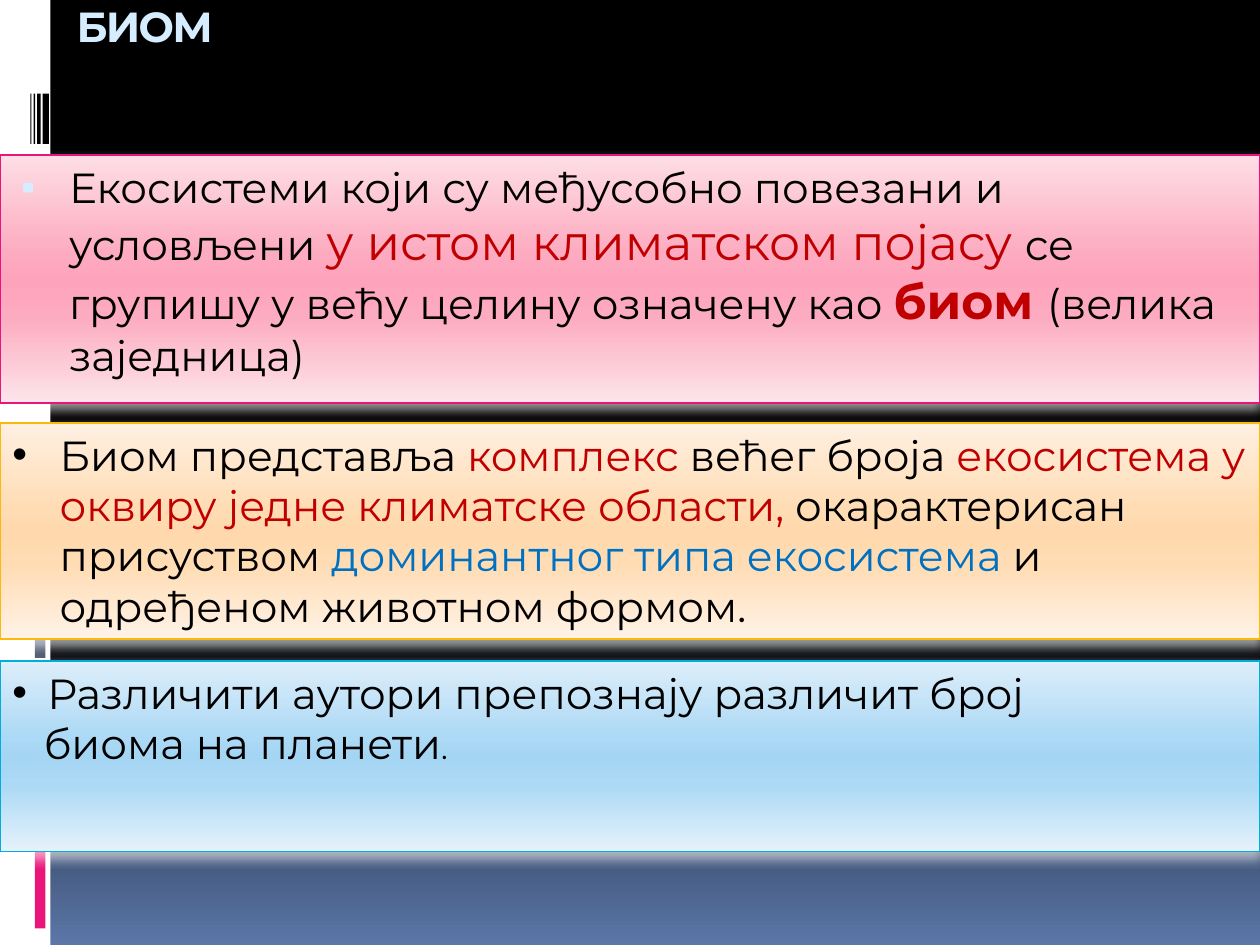
from lxml.etree import SubElement
from pptx import Presentation
from pptx.dml.color import RGBColor
from pptx.enum.shapes import MSO_SHAPE as Shape
from pptx.enum.text import MSO_ANCHOR as Anchor, PP_ALIGN as Align
from pptx.oxml.ns import qn
from pptx.util import Pt

FONT = "Montserrat"
BLACK = RGBColor(0x00, 0x00, 0x00)
WHITE = RGBColor(0xFF, 0xFF, 0xFF)
NAVY = RGBColor(0x5B, 0x77, 0xA8)
SLATE = RGBColor(0x4E, 0x5B, 0x6F)
ICE = RGBColor(0xD6, 0xEC, 0xFF)
RED = RGBColor(0xC0, 0x00, 0x00)
BLUE = RGBColor(0x00, 0x70, 0xC0)
PINK = RGBColor(0xEA, 0x15, 0x7A)
AMBER = RGBColor(0xFE, 0xB8, 0x0A)
CYAN = RGBColor(0x00, 0xAD, 0xDC)

PANEL_STOPS = (0, 40, 50, 65, 100)
PINK_SHADES = [RGBColor.from_string(c) for c in ("FDDEE5", "FDABC0", "FDA3BB", "FDABC0", "FDE5EB")]
AMBER_SHADES = [RGBColor.from_string(c) for c in ("FFF0E1", "FFDCB4", "FFD9AD", "FFDCB4", "FFF3E7")]
CYAN_SHADES = [RGBColor.from_string(c) for c in ("DEEEFA", "ACD9F5", "A4D6F4", "ACD9F5", "E5F2FB")]


def add_color(parent, color):
    return SubElement(parent, qn("a:srgbClr"), val=str(color))


def fill_downward(fill, owner, positions, colors):
    """Fill with a top-to-bottom gradient; owner is the XML element holding the fill."""
    fill.gradient()
    fill.gradient_angle = 270
    stops = next(owner.iter(qn("a:gsLst")))
    for stop in list(stops):
        stops.remove(stop)
    for position, color in zip(positions, colors):
        add_color(SubElement(stops, qn("a:gs"), pos=str(position * 1000)), color)


def add_bar(slide, left, top, width, height, color):
    bar = slide.shapes.add_shape(Shape.RECTANGLE, Pt(left), Pt(top), Pt(width), Pt(height))
    bar.shadow.inherit = False
    bar.fill.solid()
    bar.fill.fore_color.rgb = color
    bar.line.fill.background()


def add_glow(panel):
    """Give the panel a soft white shadow just below it."""
    panel.shadow.inherit = False
    effects = panel._element.spPr.find(qn("a:effectLst"))
    shadow = SubElement(effects, qn("a:outerShdw"), blurRad=str(Pt(6)), dist=str(Pt(3)),
                        dir="5400000", algn="ctr", rotWithShape="0")
    SubElement(add_color(shadow, WHITE), qn("a:alpha"), val="60000")


def add_panel(slide, top, height, shades, edge):
    panel = slide.shapes.add_shape(Shape.RECTANGLE, 0, Pt(top), Pt(720), Pt(height))
    fill_downward(panel.fill, panel._element.spPr, PANEL_STOPS, shades)
    panel.line.color.rgb = edge
    panel.line.width = Pt(0.94)
    add_glow(panel)
    panel.text_frame.word_wrap = True
    panel.text_frame.vertical_anchor = Anchor.TOP
    return panel.text_frame


def set_indent(paragraph, margin, hanging=0):
    properties = paragraph._p.get_or_add_pPr()
    properties.set("marL", str(Pt(margin)))
    properties.set("indent", str(-Pt(hanging)))


def set_bullet(paragraph, char, color=BLACK, percent=100):
    properties = paragraph._p.get_or_add_pPr()
    add_color(SubElement(properties, qn("a:buClr")), color)
    SubElement(properties, qn("a:buSzPct"), val=str(percent * 1000))
    SubElement(properties, qn("a:buFont"), typeface="Arial")
    SubElement(properties, qn("a:buChar"), char=char)


def write(paragraph, *pieces):
    """Write (text, color, size, bold) pieces; size and bold may be left out."""
    paragraph.alignment = Align.LEFT
    paragraph.font.name = FONT
    for text, color, *style in pieces:
        size, bold = (style + [24, False][len(style):])
        run = paragraph.add_run()
        run.text = text
        run.font.color.rgb = color
        run.font.size = Pt(size)
        run.font.bold = bold


def add_side_strip(slide):
    add_bar(slide, 0, 0, 28.8, 540, WHITE)
    for top, height, color in ((397.5, 133, PINK), (378, 18, AMBER),
                               (365, 11, SLATE), (358, 6, PINK)):
        add_bar(slide, 20, top, 6, height, color)
    for left, width in ((24.3, 3.6), (21.2, 2), (19.3, 0.8), (17.4, 0.6)):
        add_bar(slide, left, 53.5, width, 28.8, BLACK)


def add_title(slide):
    frame = slide.shapes.add_textbox(Pt(36.7), 0, Pt(648), Pt(90)).text_frame
    frame.word_wrap = True
    frame.margin_top = 0
    title = frame.paragraphs[0]
    write(title, ("БИОМ", ICE, 24, True))
    title.runs[0].font._element.set("spc", "-100")


def add_definition(slide):
    definition = add_panel(slide, 88.5, 142, PINK_SHADES, PINK).paragraphs[0]
    set_indent(definition, 32.4, 27.4)
    set_bullet(definition, "▪", ICE, 95)
    write(definition,
          ("Екосистеми који су међусобно повезани и условљени ", BLACK),
          ("у истом климатском појасу ", RED, 28),
          ("се групишу у већу целину означену као ", BLACK),
          ("биом ", RED, 28, True),
          ("(велика заједница)", BLACK))


def add_composition(slide):
    composition = add_panel(slide, 241.7, 123.6, AMBER_SHADES, AMBER).paragraphs[0]
    set_indent(composition, 27, 27)
    set_bullet(composition, "•")
    write(composition,
          ("Биом представља ", BLACK),
          ("комплекс ", RED),
          ("већег броја ", BLACK),
          ("екосистема у оквиру једне климатске области, ", RED),
          ("окарактерисан присуством ", BLACK),
          ("доминантног типа екосистема ", BLUE),
          ("и одређеном животном формом.", BLACK))


def add_count_note(slide):
    frame = add_panel(slide, 377.7, 109, CYAN_SHADES, CYAN)
    first_line = frame.paragraphs[0]
    set_indent(first_line, 20, 20)
    set_bullet(first_line, "•")
    write(first_line, ("Различити аутори препознају различит број", BLACK))
    second_line = frame.add_paragraph()
    set_indent(second_line, 18)
    write(second_line, ("биома на планети", BLACK), (".", BLACK, 18))


def main():
    deck = Presentation()
    deck.slide_width, deck.slide_height = Pt(720), Pt(540)
    slide = deck.slides.add_slide(deck.slide_layouts[6])
    fill_downward(slide.background.fill, slide._element, (0, 65, 100), (BLACK, BLACK, NAVY))
    add_side_strip(slide)
    add_title(slide)
    add_definition(slide)
    add_composition(slide)
    add_count_note(slide)
    deck.save("out.pptx")


if __name__ == "__main__":
    main()
